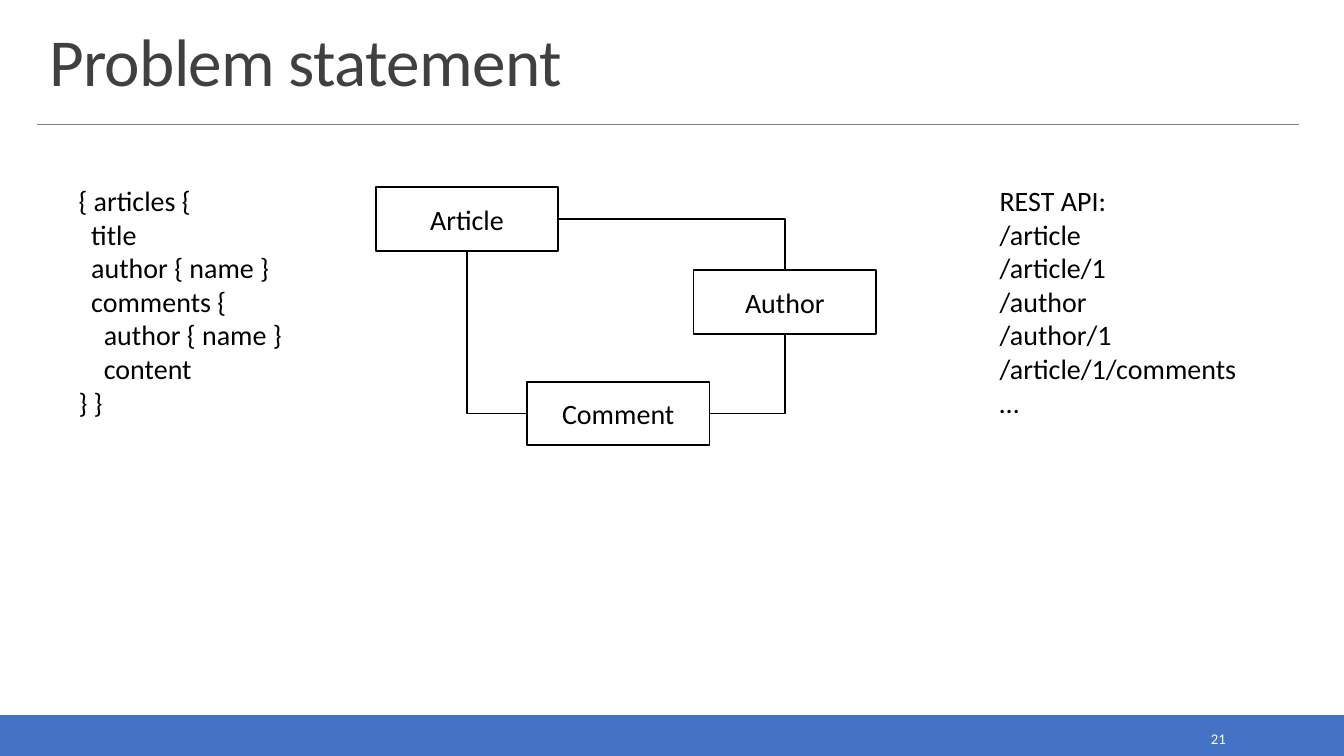
from dataclasses import dataclass

from pptx import Presentation
from pptx.dml.color import RGBColor
from pptx.enum.shapes import MSO_CONNECTOR as Line, MSO_SHAPE as Preset
from pptx.enum.text import MSO_ANCHOR as Anchor, MSO_AUTO_SIZE as AutoSize, PP_ALIGN as Align
from pptx.oxml.ns import qn
from pptx.shapes.autoshape import Shape
from pptx.shapes.connector import Connector
from pptx.slide import Slide
from pptx.util import Cm, Pt

TOP, LEFT, BOTTOM, RIGHT = range(4)


@dataclass(frozen=True)
class Theme:
    font: str = "Calibri"
    ink: RGBColor = RGBColor(0x00, 0x00, 0x00)
    heading: RGBColor = RGBColor(0x40, 0x40, 0x40)
    rule: RGBColor = RGBColor(0x80, 0x80, 0x80)
    accent: RGBColor = RGBColor(0x44, 0x72, 0xC4)
    paper: RGBColor = RGBColor(0xFF, 0xFF, 0xFF)
    heading_size: float = 48
    body_size: float = 20
    number_size: float = 10.5
    outline: float = 1.25
    relation: float = 1
    hairline: float = 0.5


@dataclass(frozen=True)
class Label:
    text: str
    left: float
    top: float
    width: float
    height: float
    size: float
    color: RGBColor
    align: Align = Align.LEFT
    anchor: Anchor = Anchor.TOP
    grow: bool = False


@dataclass(frozen=True)
class Entity:
    name: str
    left: float
    top: float


@dataclass(frozen=True)
class Relation:
    source: str
    source_side: int
    target: str
    target_side: int


THEME = Theme()
SLIDE_WIDTH, SLIDE_HEIGHT = 33.87, 19.05
FOOTER_HEIGHT = 1.02
ENTITY_WIDTH, ENTITY_HEIGHT = 4.6, 1.6

QUERY = """{ articles {
  title
  author { name }
  comments {
    author { name }
    content
} }"""
ENDPOINTS = """REST API:
/article
/article/1
/author
/author/1
/article/1/comments
…"""

TITLE = Label("Problem statement", 0.99, 0.51, 31.8, 2.13,
              THEME.heading_size, THEME.heading, anchor=Anchor.BOTTOM)
LABELS = [
    Label("21", 27.51, 18.26, 3.63, 0.71, THEME.number_size, THEME.paper,
          Align.RIGHT, Anchor.MIDDLE),
    Label(ENDPOINTS, 24.94, 4.5, 6.86, 6.25, THEME.body_size, THEME.ink, grow=True),
    Label(QUERY, 1.73, 4.5, 8.46, 6.25, THEME.body_size, THEME.ink, grow=True),
]
ENTITIES = [
    Entity("Article", 9.47, 4.72),
    Entity("Author", 17.48, 6.81),
    Entity("Comment", 13.28, 9.62),
]
RELATIONS = [
    Relation("Article", RIGHT, "Author", TOP),
    Relation("Comment", LEFT, "Article", BOTTOM),
    Relation("Comment", RIGHT, "Author", BOTTOM),
]


def write(shape: Shape, text: str, size: float, color: RGBColor, align: Align) -> None:
    """Fill a shape with uniformly formatted paragraphs."""
    shape.text_frame.text = text
    for paragraph in shape.text_frame.paragraphs:
        paragraph.alignment = align
        for run in paragraph.runs:
            run.font.name = THEME.font
            run.font.size = Pt(size)
            run.font.color.rgb = color


def add_label(slide: Slide, label: Label) -> Shape:
    """Place a wrapped text box."""
    box = slide.shapes.add_textbox(Cm(label.left), Cm(label.top),
                                   Cm(label.width), Cm(label.height))
    write(box, label.text, label.size, label.color, label.align)
    frame = box.text_frame
    frame.word_wrap = True
    frame.vertical_anchor = label.anchor
    frame.auto_size = AutoSize.SHAPE_TO_FIT_TEXT if label.grow else AutoSize.NONE
    return box


def add_title(slide: Slide) -> None:
    """Place the heading with tight line and letter spacing."""
    paragraph = add_label(slide, TITLE).text_frame.paragraphs[0]
    paragraph.line_spacing = 0.85
    paragraph.runs[0].font._element.set("spc", "-50")


def add_rectangle(slide: Slide, left: float, top: float, width: float, height: float,
                  line: RGBColor) -> Shape:
    """Place an outlined rectangle without shadow."""
    rectangle = slide.shapes.add_shape(Preset.RECTANGLE, Cm(left), Cm(top),
                                       Cm(width), Cm(height))
    rectangle.shadow.inherit = False
    rectangle.line.color.rgb = line
    rectangle.line.width = Pt(THEME.outline)
    return rectangle


def add_footer(slide: Slide) -> None:
    """Place the coloured band along the bottom edge."""
    footer = add_rectangle(slide, 0, SLIDE_HEIGHT - FOOTER_HEIGHT, SLIDE_WIDTH,
                           FOOTER_HEIGHT, THEME.accent)
    footer.fill.solid()
    footer.fill.fore_color.rgb = THEME.accent


def add_entity(slide: Slide, entity: Entity) -> Shape:
    """Place one named box of the data model."""
    box = add_rectangle(slide, entity.left, entity.top, ENTITY_WIDTH, ENTITY_HEIGHT, THEME.ink)
    box.fill.background()
    write(box, entity.name, THEME.body_size, THEME.ink, Align.CENTER)
    box.text_frame.vertical_anchor = Anchor.MIDDLE
    return box


def style_line(line: Connector, color: RGBColor, width: float) -> None:
    """Colour a connector and remove its shadow."""
    line.line.color.rgb = color
    line.line.width = Pt(width)
    properties = line._element.spPr
    properties.append(properties.makeelement(qn("a:effectLst"), {}))


def add_relation(slide: Slide, relation: Relation, boxes: dict[str, Shape]) -> None:
    """Join two entities by a connector with a single bend."""
    link = slide.shapes.add_connector(Line.ELBOW, Cm(0), Cm(0), Cm(0), Cm(0))
    link.begin_connect(boxes[relation.source], relation.source_side)
    link.end_connect(boxes[relation.target], relation.target_side)
    link._element.spPr.find(qn("a:prstGeom")).set("prst", "bentConnector2")
    style_line(link, THEME.ink, THEME.relation)


def main() -> None:
    """Build and save the slide."""
    deck = Presentation()
    deck.slide_width, deck.slide_height = Cm(SLIDE_WIDTH), Cm(SLIDE_HEIGHT)
    slide = deck.slides.add_slide(deck.slide_layouts[6])
    add_footer(slide)
    divider = slide.shapes.add_connector(Line.STRAIGHT, Cm(0.94), Cm(3.13), Cm(32.74), Cm(3.13))
    style_line(divider, THEME.rule, THEME.hairline)
    add_title(slide)
    for label in LABELS:
        add_label(slide, label)
    boxes = {entity.name: add_entity(slide, entity) for entity in ENTITIES}
    for relation in RELATIONS:
        add_relation(slide, relation, boxes)
    deck.save("out.pptx")


if __name__ == "__main__":
    main()
